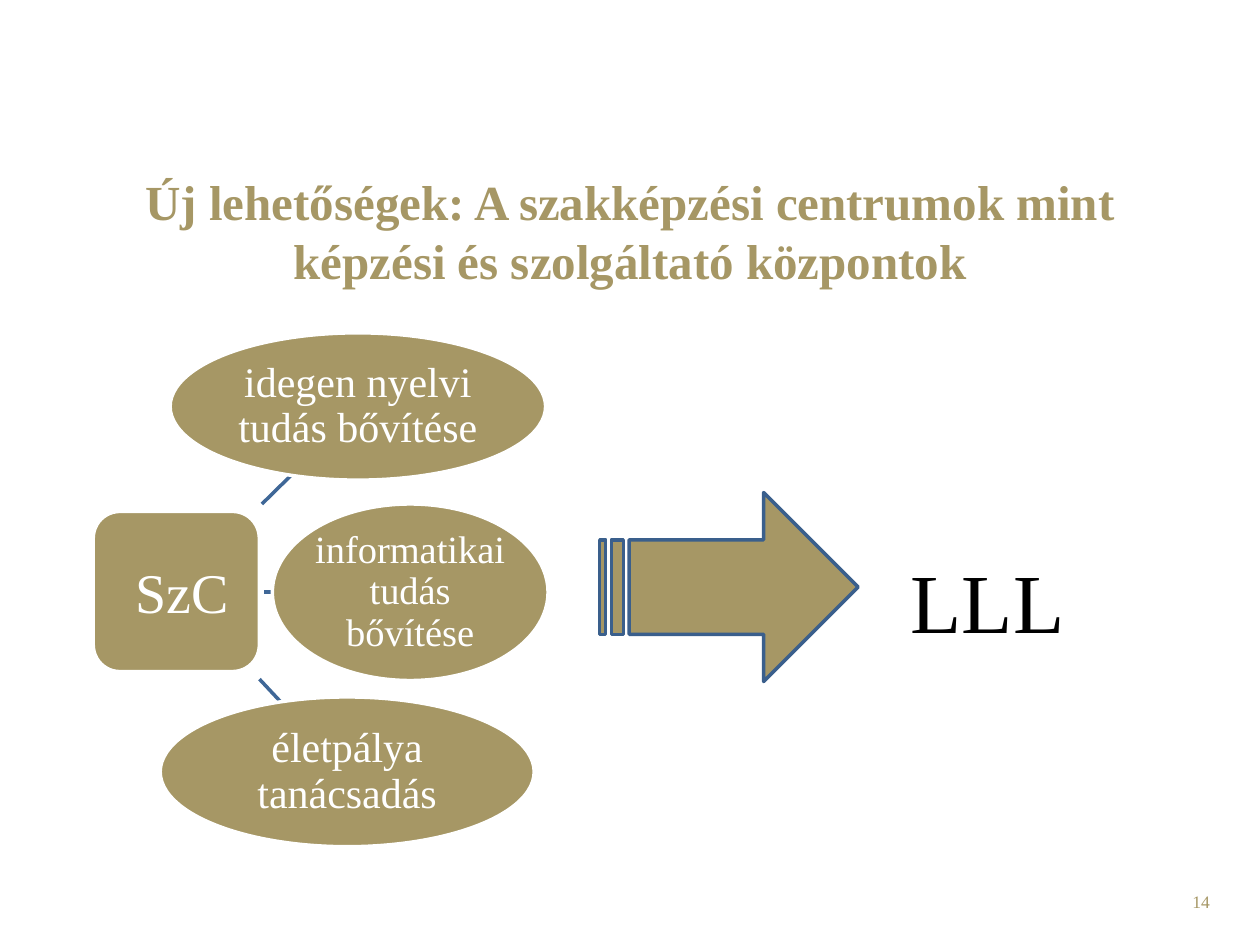
"""Build a slide on the vocational training centres and lifelong learning."""
from dataclasses import dataclass

from lxml.etree import SubElement
from pptx import Presentation
from pptx.dml.color import RGBColor
from pptx.enum.shapes import MSO_CONNECTOR, MSO_SHAPE
from pptx.enum.text import MSO_ANCHOR, MSO_AUTO_SIZE, PP_ALIGN
from pptx.oxml.ns import qn
from pptx.util import Cm, Pt


@dataclass(frozen=True)
class Theme:
    font: str = "Times New Roman"
    gold: RGBColor = RGBColor(0xA6, 0x97, 0x65)
    white: RGBColor = RGBColor(0xFF, 0xFF, 0xFF)
    black: RGBColor = RGBColor(0, 0, 0)
    link: RGBColor = RGBColor(0x3F, 0x67, 0x97)
    arrow_edge: RGBColor = RGBColor(0x3A, 0x5F, 0x8C)
    line: Pt = Pt(2)
    title: Pt = Pt(28)
    center: Pt = Pt(32)
    service: Pt = Pt(24)
    long_service: Pt = Pt(22)
    goal: Pt = Pt(48)
    number: Pt = Pt(10)


theme = Theme()


def write(shape, text, size, color, align, anchor, bold=False):
    frame = shape.text_frame
    frame.text = text
    frame.word_wrap = True
    frame.auto_size = MSO_AUTO_SIZE.NONE
    frame.vertical_anchor = anchor
    para = frame.paragraphs[0]
    para.alignment = align
    font = para.runs[0].font
    font.name, font.size, font.bold = theme.font, size, bold
    font.color.rgb = color


def add_gold_shape(kind, box, edge):
    shape = slide.shapes.add_shape(kind, *map(Cm, box))
    shape.shadow.inherit = False
    shape.fill.solid()
    shape.fill.fore_color.rgb = theme.gold
    shape.line.color.rgb = edge
    shape.line.width = theme.line
    return shape


deck = Presentation()
deck.slide_width, deck.slide_height = Cm(25.4), Cm(19.05)
slide = deck.slides.add_slide(deck.slide_layouts[5])

title = slide.shapes.title
title.left, title.top, title.width, title.height = map(Cm, (1.09, 3.33, 23.22, 2.62))
write(title, "Új lehetőségek: A szakképzési centrumok mint képzési és szolgáltató központok",
      theme.title, theme.gold, PP_ALIGN.CENTER, MSO_ANCHOR.MIDDLE, bold=True)

links = [
    (5.23, 13.69, 5.66, 14.15),
    (5.33, 11.93, 5.49, 11.93),
    (5.28, 10.16, 5.87, 9.58),
]
for ends in links:
    link = slide.shapes.add_connector(MSO_CONNECTOR.STRAIGHT, *map(Cm, ends))
    link.line.color.rgb = theme.link
    link.line.width = theme.line
    SubElement(link._element.spPr, qn("a:effectLst"))

center = add_gold_shape(MSO_SHAPE.FLOWCHART_ALTERNATE_PROCESS,
                        (1.88, 10.31, 3.35, 3.23), theme.white)
write(center, "SzC", theme.center, theme.white, PP_ALIGN.CENTER, MSO_ANCHOR.MIDDLE)
center.text_frame.margin_left, center.text_frame.margin_right = Cm(0.25), Cm(0)

services = [
    ("idegen nyelvi tudás bővítése", (3.43, 6.71, 7.57, 2.97), theme.service),
    ("informatikai tudás bővítése", (5.49, 10.16, 5.56, 3.56), theme.long_service),
    ("életpálya tanácsadás", (3.23, 14.05, 7.54, 3.02), theme.service),
]
for text, box, size in services:
    oval = add_gold_shape(MSO_SHAPE.OVAL, box, theme.white)
    write(oval, text, size, theme.white, PP_ALIGN.CENTER, MSO_ANCHOR.MIDDLE)
    frame = oval.text_frame
    frame.margin_left = frame.margin_right = Cm(0.05)
    frame.margin_top = frame.margin_bottom = Cm(0.05)
    frame.paragraphs[0].line_spacing = 0.9

add_gold_shape(MSO_SHAPE.STRIPED_RIGHT_ARROW, (12.09, 9.93, 5.21, 3.81), theme.arrow_edge)

labels = [
    ("LLL", (18.11, 10.95, 3.81, 2.31), theme.goal, theme.black, PP_ALIGN.LEFT),
    ("14", (18.72, 17.83, 5.92, 1.02), theme.number, theme.gold, PP_ALIGN.RIGHT),
]
for text, box, size, color, align in labels:
    label = slide.shapes.add_textbox(*map(Cm, box))
    write(label, text, size, color, align, MSO_ANCHOR.TOP)

deck.save("out.pptx")
